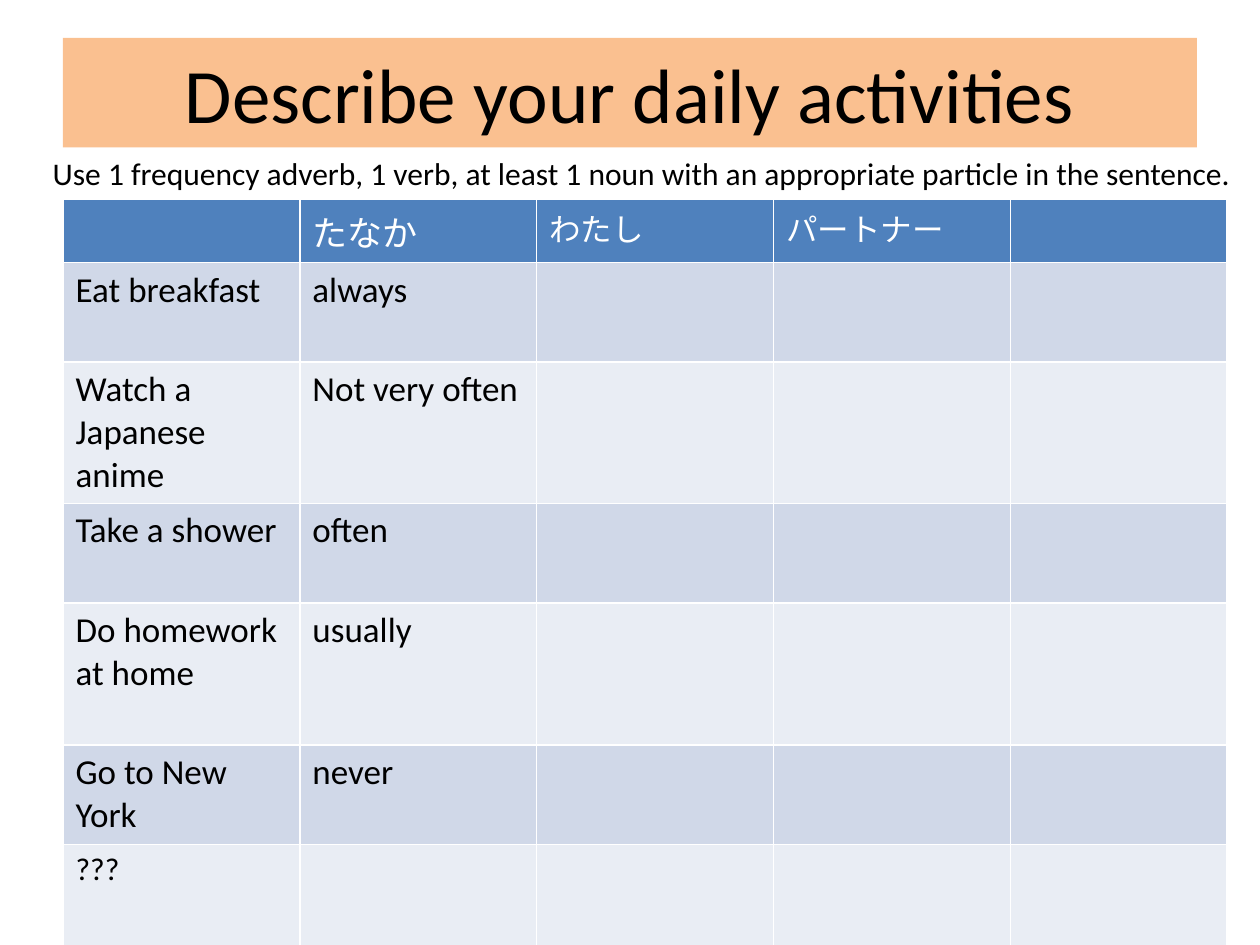
from lxml import etree
from pptx import Presentation, util as u
from pptx.dml.color import RGBColor
from pptx.enum import shapes, text
from pptx.oxml.ns import qn

TITLE = "Describe your daily activities"
HINT = ("Use 1 frequency adverb, 1 verb, at least 1 noun with an appropriate "
        "particle in the sentence.")
HEADER = [("", 18), ("たなか", 20), ("わたし", 18), ("パートナー", 18), ("", 18)]
ACTIVITIES = [
    ("Eat breakfast", "always", 20, 0.79),
    ("Watch a Japanese anime", "Not very often", 20, 1.12),
    ("Take a shower", "often", 20, 0.79),
    ("Do homework at home", "usually", 20, 1.13),
    ("Go to New York", "never", 20, 0.79),
    ("???", "", 18, 0.8),
]
COL_WIDTHS = [1.88] * 4 + [1.72]
HEADER_HEIGHT = 0.5
FONT = "Calibri"
COLORS = {"title": "FAC090", "header": "4F81BD", "odd": "D0D8E8",
          "even": "E9EDF4", "white": "FFFFFF", "black": "000000"}


def color(name):
    return RGBColor.from_string(COLORS[name])


def paint(shape, name):
    shape.fill.solid()
    shape.fill.fore_color.rgb = color(name)


def write(tf, content, size, name="black"):
    p = tf.paragraphs[0]
    p.text = content
    for font in [p.font] + [r.font for r in p.runs]:
        font.size = u.Pt(size)
        font.name = FONT
        font.bold = False
        font.color.rgb = color(name)
    return p


def add_borders(cell):
    tc_pr = cell._tc.get_or_add_tcPr()
    for side in ("lnL", "lnR", "lnT", "lnB"):
        ln = etree.SubElement(tc_pr, qn(f"a:{side}"), w=str(u.Pt(1)))
        fill = etree.SubElement(ln, qn("a:solidFill"))
        etree.SubElement(fill, qn("a:srgbClr"), val=COLORS["white"])


def add_title(s):
    sp = s.shapes.add_shape(shapes.MSO_SHAPE.RECTANGLE, u.Inches(0.5),
                            u.Inches(0.3), u.Inches(9), u.Inches(0.87))
    sp.shadow.inherit = False
    sp.line.fill.background()
    paint(sp, "title")
    tf = sp.text_frame
    tf.word_wrap = True
    tf.vertical_anchor = text.MSO_ANCHOR.MIDDLE
    write(tf, TITLE, 44).alignment = text.PP_ALIGN.CENTER


def add_table(s):
    rows = [HEADER] + [[(activity, size), (often, size)] + [("", 18)] * 3
                       for activity, often, size, _ in ACTIVITIES]
    heights = [HEADER_HEIGHT] + [a[-1] for a in ACTIVITIES]
    table = s.shapes.add_table(len(rows), len(COL_WIDTHS), u.Inches(0.5),
                               u.Inches(1.58), u.Inches(sum(COL_WIDTHS)),
                               u.Inches(sum(heights))).table
    for col, width in zip(table.columns, COL_WIDTHS):
        col.width = u.Inches(width)
    for i, (row, height) in enumerate(zip(rows, heights)):
        table.rows[i].height = u.Inches(height)
        band = "header" if i == 0 else "odd" if i % 2 else "even"
        for j, (content, size) in enumerate(row):
            cell = table.cell(i, j)
            add_borders(cell)
            paint(cell, band)
            write(cell.text_frame, content, size, "black" if i else "white")


def add_hint(s):
    tf = s.shapes.add_textbox(u.Inches(0.32), u.Inches(1.17),
                              u.Inches(9.68), u.Inches(0.4)).text_frame
    tf.word_wrap = True
    write(tf, HINT, 18)


def main():
    prs = Presentation()
    prs.slide_width, prs.slide_height = u.Inches(10), u.Inches(7.5)
    s = prs.slides.add_slide(prs.slide_layouts[6])
    add_title(s)
    add_table(s)
    add_hint(s)
    prs.save("out.pptx")


if __name__ == "__main__":
    main()
